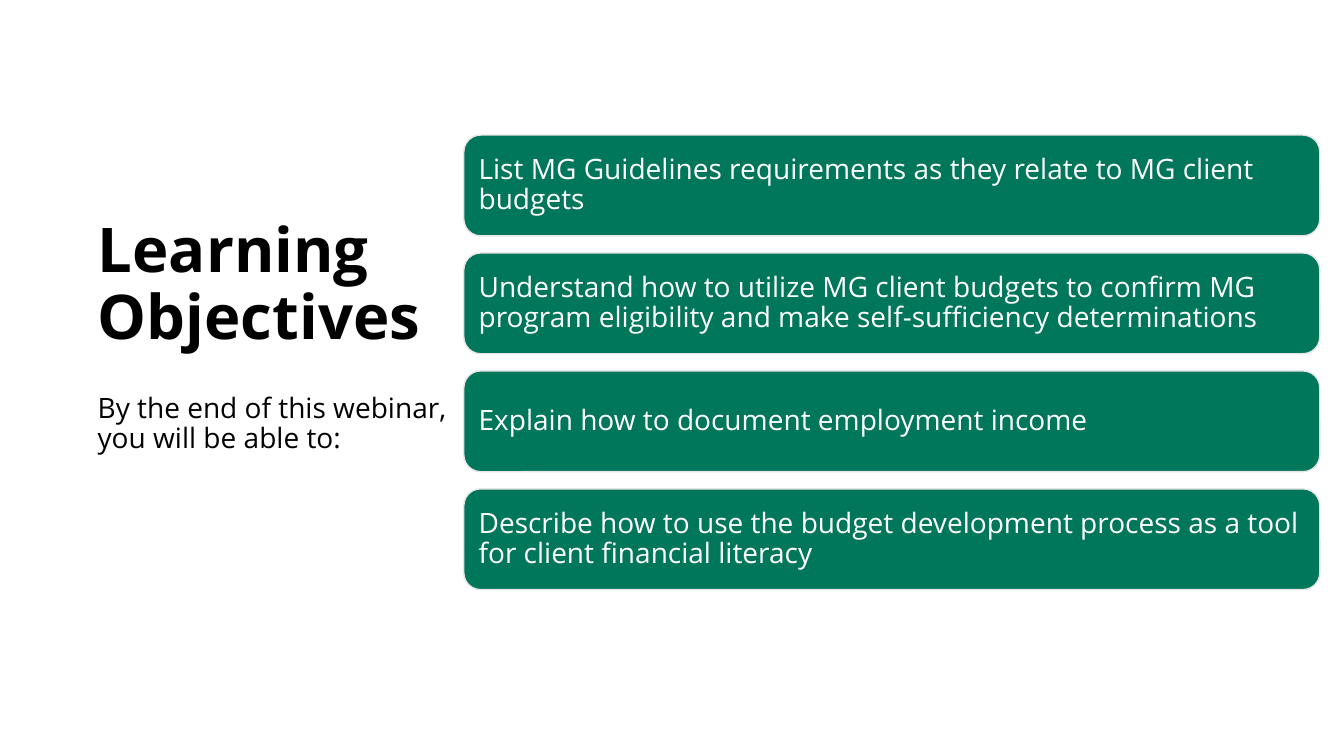
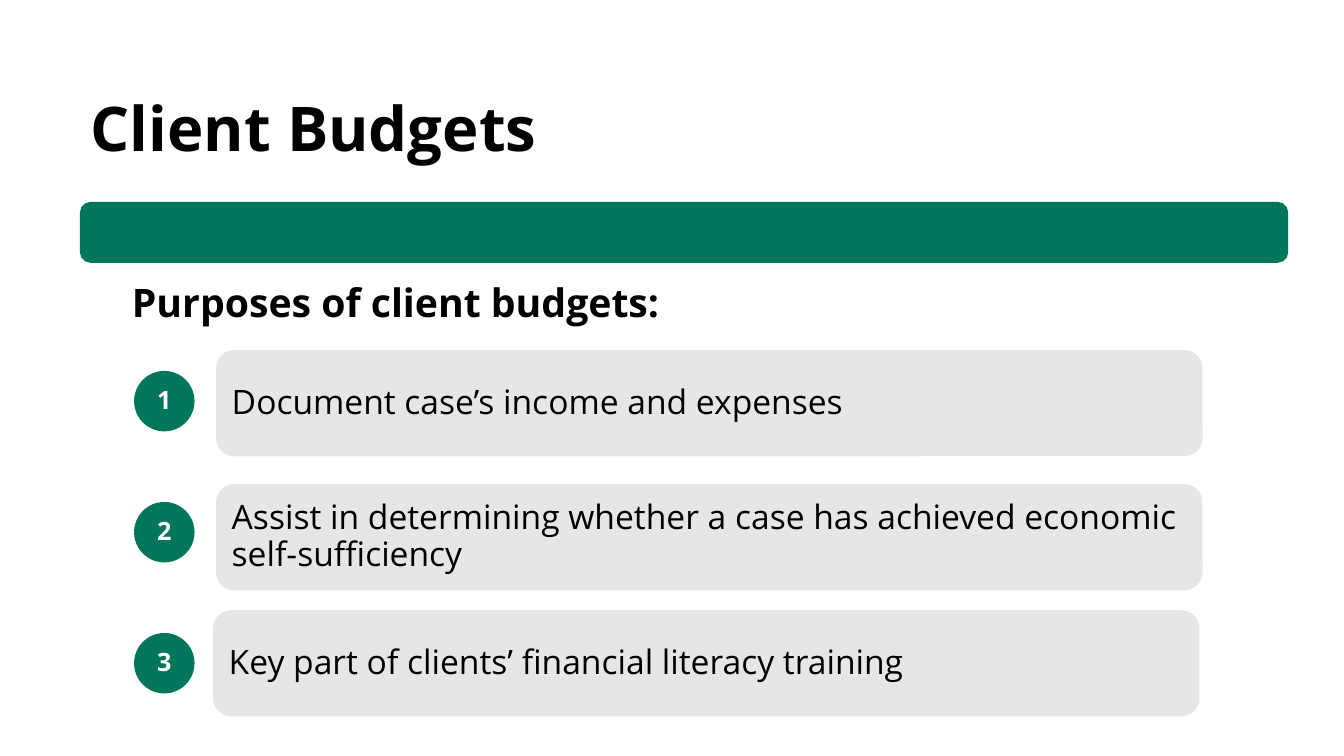
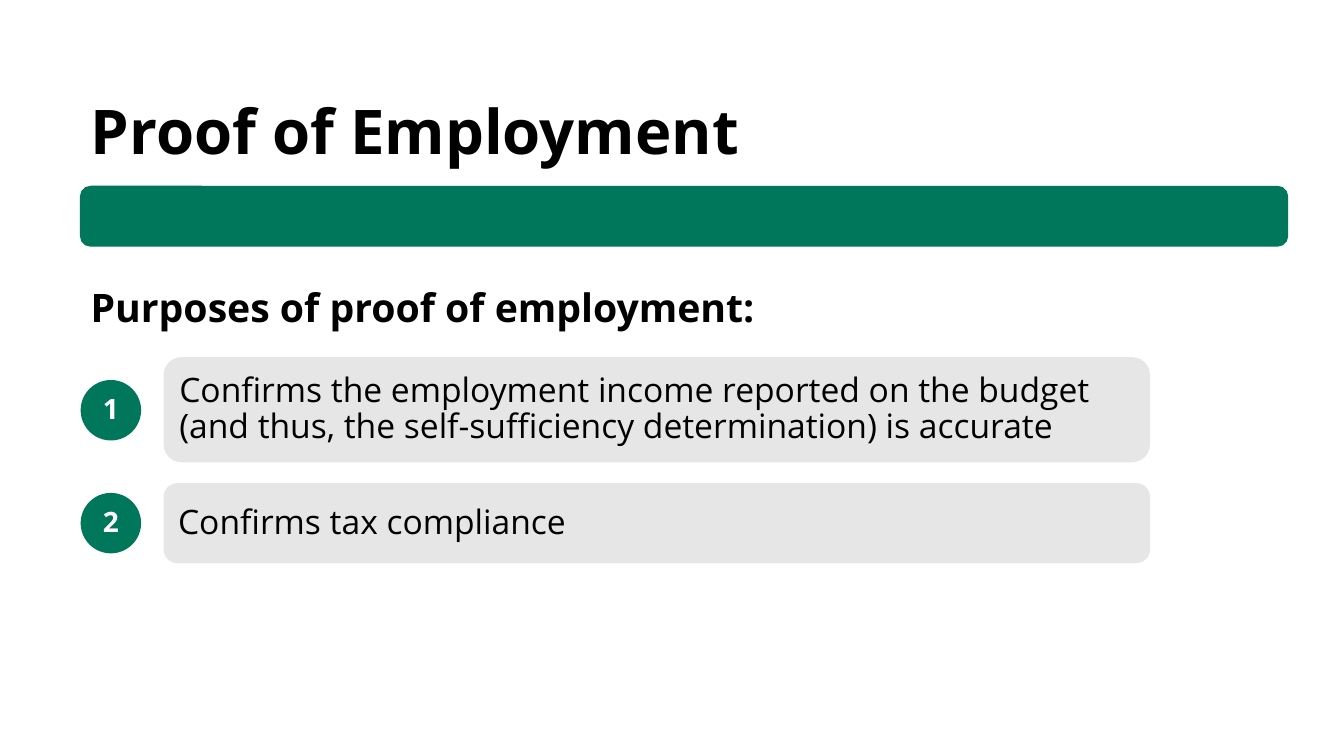
from pptx import Presentation
from pptx.dml.color import RGBColor
from pptx.enum.shapes import MSO_SHAPE as Shape
from pptx.enum.text import MSO_ANCHOR as Anchor, MSO_AUTO_SIZE as AutoSize, PP_ALIGN as Align
from pptx.util import Inches, Pt

# Shared style
FONT = "Open Sans"
GREEN, GRAY, BLACK, WHITE = "00765A", "E7E6E6", "000000", "FFFFFF"
LINE_SPACING = 0.9
BADGE_SIZE = 0.6
TITLE_ONLY = 5


def color(hex_string):
    return RGBColor.from_string(hex_string)


def write(shape, lines, size, font_color=BLACK, bold=False, align=Align.LEFT, anchor=Anchor.TOP):
    """Fill a shape with one paragraph for each line."""
    frame = shape.text_frame
    frame.word_wrap = True
    frame.auto_size = AutoSize.NONE
    frame.vertical_anchor = anchor
    for index, line in enumerate(lines):
        paragraph = frame.add_paragraph() if index else frame.paragraphs[0]
        paragraph.alignment = align
        paragraph.line_spacing = LINE_SPACING
        paragraph.space_before = Pt(0)
        run = paragraph.add_run()
        run.text = line
        run.font.name = FONT
        run.font.size = Pt(size)
        run.font.bold = bold
        run.font.color.rgb = color(font_color)


def add_box(slide, preset, box, fill, line=None):
    shape = slide.shapes.add_shape(preset, *map(Inches, box))
    shape.shadow.inherit = False
    shape.fill.solid()
    shape.fill.fore_color.rgb = color(fill)
    if line:
        shape.line.color.rgb = color(line)
        shape.line.width = Pt(1)
    else:
        shape.line.fill.background()
    return shape


def add_text(slide, box, text, size, **style):
    write(slide.shapes.add_textbox(*map(Inches, box)), [text], size, **style)


def add_card(slide, box, text, size, fill, font_color):
    card = add_box(slide, Shape.ROUNDED_RECTANGLE, box, fill, GRAY)
    write(card, [text], size, font_color, anchor=Anchor.MIDDLE)


def add_badge(slide, left, top, number, size):
    badge = add_box(slide, Shape.OVAL, (left, top, BADGE_SIZE, BADGE_SIZE), GREEN)
    frame = badge.text_frame
    frame.margin_left = frame.margin_right = frame.margin_top = frame.margin_bottom = 0
    write(badge, [str(number)], size, WHITE, True, Align.CENTER, Anchor.MIDDLE)


def add_titled_slide(presentation, lines, box):
    slide = presentation.slides.add_slide(presentation.slide_layouts[TITLE_ONLY])
    title = slide.shapes.title
    title.left, title.top, title.width, title.height = map(Inches, box)
    write(title, lines, 44, bold=True)
    return slide


def add_objectives_slide(presentation, title_lines, intro, objectives):
    slide = add_titled_slide(presentation, title_lines, (0.87, 2.13, 3.87, 1.58))
    add_text(slide, (0.87, 3.86, 4.17, 0.77), intro, 20)

    # Evenly stacked objective cards
    left, top, width, height, pitch = 4.6, 1.34, 8.49, 1, 1.17
    for index, objective in enumerate(objectives):
        box = (left, top + index * pitch, width, height)
        add_card(slide, box, objective, 20, GREEN, WHITE)


def add_purposes_slide(presentation, title, title_top, band_top, heading, heading_at,
                       badge_at, badge_pitch, badge_font, cards):
    """Each card is (text, left, top, height)."""
    slide = add_titled_slide(presentation, [title], (0.8, title_top, 9.52, 0.84))
    add_box(slide, Shape.ROUNDED_RECTANGLE, (0.8, band_top, 11.97, 0.59), GREEN, GREEN)
    add_text(slide, (*heading_at, 10.92, 0.57), heading, 28, bold=True, align=Align.JUSTIFY)

    # Numbered purposes
    badge_left, badge_top = badge_at
    for index, (text, left, top, height) in enumerate(cards):
        add_badge(slide, badge_left, badge_top + index * badge_pitch, index + 1, badge_font)
        add_card(slide, (left, top, 9.77, height), text, 24, GRAY, BLACK)


def main():
    presentation = Presentation()
    presentation.slide_width = Inches(13.33)
    presentation.slide_height = Inches(7.5)

    add_objectives_slide(
        presentation,
        ["Learning", "Objectives"],
        "By the end of this webinar, you will be able to:",
        [
            "List MG Guidelines requirements as they relate to MG client budgets",
            "Understand how to utilize MG client budgets to confirm MG program eligibility "
            "and make self-sufficiency determinations",
            "Explain how to document employment income",
            "Describe how to use the budget development process as a tool for client "
            "financial literacy",
        ],
    )
    add_purposes_slide(
        presentation,
        "Client Budgets", title_top=0.93, band_top=2.01,
        heading="Purposes of client budgets:", heading_at=(1.21, 2.76),
        badge_at=(1.33, 3.68), badge_pitch=1.3, badge_font=18,
        cards=[
            ("Document case’s income and expenses", 2.15, 3.48, 1.04),
            ("Assist in determining whether a case has achieved economic self-sufficiency",
             2.15, 4.81, 1.04),
            ("Key part of clients’ financial literacy training", 2.12, 6.06, 1.04),
        ],
    )
    add_purposes_slide(
        presentation,
        "Proof of Employment", title_top=0.95, band_top=1.85,
        heading="Purposes of proof of employment:", heading_at=(0.8, 2.81),
        badge_at=(0.8, 3.77), badge_pitch=1.12, badge_font=20,
        cards=[
            ("Confirms the employment income reported on the budget (and thus, the "
             "self-sufficiency determination) is accurate", 1.63, 3.55, 1.03),
            ("Confirms tax compliance", 1.63, 4.8, 0.78),
        ],
    )
    presentation.save("out.pptx")


if __name__ == "__main__":
    main()
